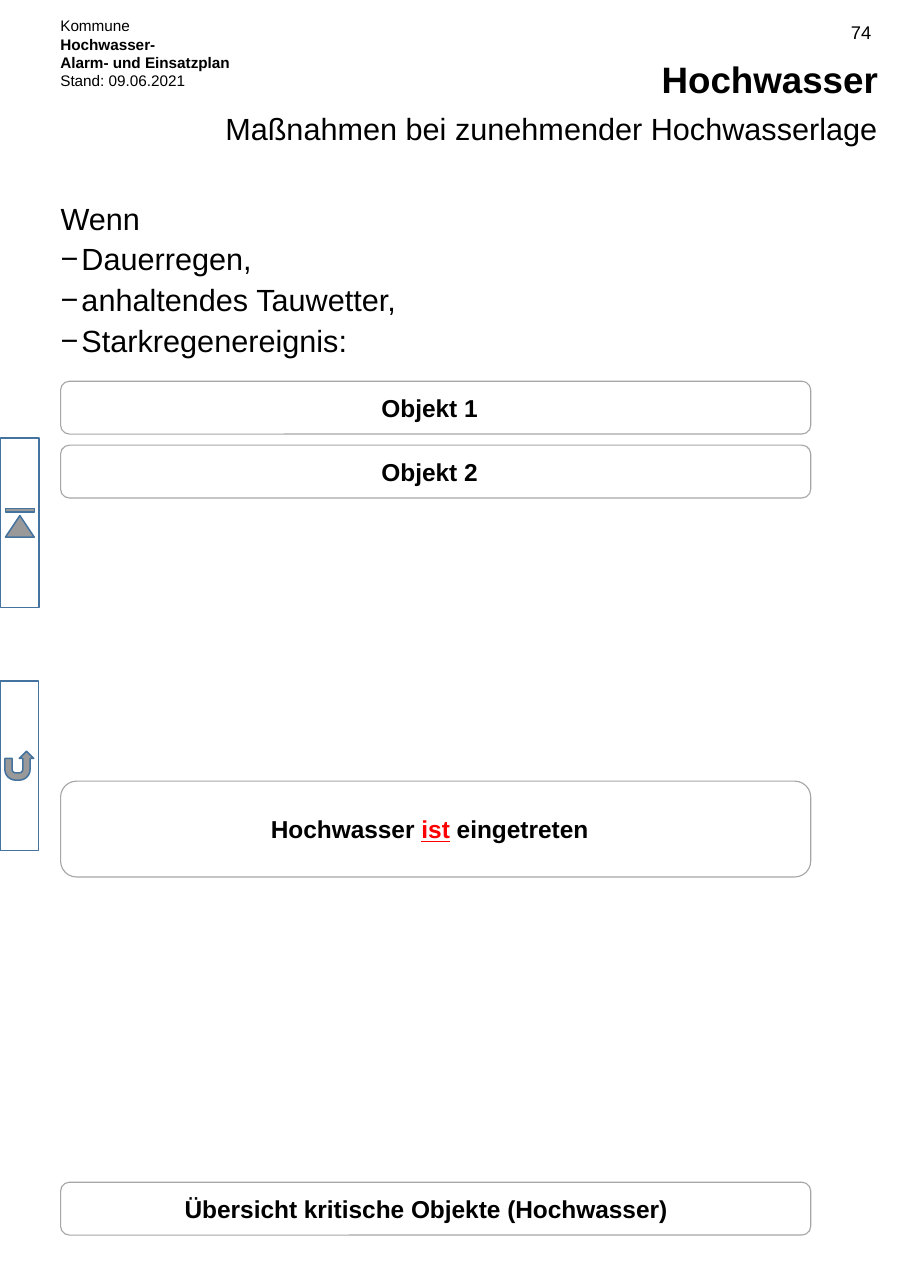
from dataclasses import dataclass

from lxml import etree
from pptx import Presentation
from pptx.dml.color import RGBColor
from pptx.enum import shapes, text
from pptx.oxml import ns
from pptx.util import Inches, Pt

FONT = "Arial"
BLACK, WHITE, RED = "000000", "FFFFFF", "FF0000"
BOX_LINE, BUTTON_LINE = "A6A6A6", "43739E"
LEFT, RIGHT = 0.55, 7.97
BOX_WIDTH = 6.81
LIST_INDENT = 0.19

ALIGN = text.PP_ALIGN
ANCHOR = text.MSO_ANCHOR
SHAPE = shapes.MSO_SHAPE


@dataclass
class Run:
    text: str
    bold: bool = False
    color: str = BLACK
    underline: bool = False


@dataclass
class TextBlock:
    left: float
    top: float
    width: float
    height: float
    size: float
    paragraphs: list[list[Run]]
    align: ALIGN = ALIGN.LEFT
    anchor: ANCHOR = ANCHOR.TOP
    insets: tuple[float, float, float, float] = (0.1, 0.05, 0.1, 0.05)
    line_spacing: float = 1.0
    space_before: float = 0


@dataclass
class ObjectBox:
    top: float
    height: float
    runs: list[Run]


@dataclass
class NavButton:
    kind: SHAPE
    left: float
    top: float
    width: float
    height: float
    rotation: float = 0


TITLE_INSETS = (0.1, 0.05, 0, 0.05)

HEADER = TextBlock(0.45, 0.1, 3.1, 0.94, 10, [
    [Run("Kommune")],
    [Run("Hochwasser-", bold=True)],
    [Run("Alarm- und Einsatzplan", bold=True)],
    [Run("Stand: 09.06.2021")],
])
PAGE_NUMBER = TextBlock(6.58, 0.14, 1.42, 0.31, 12, [[Run("74")]], ALIGN.RIGHT,
                        insets=(0.11, 0.05, 0.09, 0.05))
TITLE = TextBlock(3.01, 0.36, RIGHT - 3.01, 0.61, 24, [[Run("Hochwasser", bold=True)]],
                  ALIGN.RIGHT, ANCHOR.BOTTOM, TITLE_INSETS, 0.9)
SUBTITLE = TextBlock(LEFT, 0.99, RIGHT - LEFT, 0.58, 20,
                     [[Run("Maßnahmen bei zunehmender Hochwasserlage")]],
                     ALIGN.RIGHT, insets=TITLE_INSETS, line_spacing=0.9, space_before=8.3)
CONDITIONS = TextBlock(LEFT, 1.85, 7.44, 2.08, 20, [
    [Run("Wenn")],
    [Run("Dauerregen,")],
    [Run("anhaltendes Tauwetter,")],
    [Run("Starkregenereignis:")],
], insets=(0, 0, 0, 0), line_spacing=0.9, space_before=5)

BOXES = [
    ObjectBox(3.46, 0.48, [Run("Objekt 1", True)]),
    ObjectBox(4.04, 0.48, [Run("Objekt 2", True)]),
    ObjectBox(7.09, 0.87, [Run("Hochwasser ", True), Run("ist", True, RED, True),
                           Run(" eingetreten", True)]),
    ObjectBox(10.73, 0.48, [Run("Übersicht kritische Objekte (Hochwasser) ", True)]),
]
BUTTONS = [
    NavButton(SHAPE.ACTION_BUTTON_BEGINNING, -0.59, 4.57, 1.54, 0.35, 90),
    NavButton(SHAPE.ACTION_BUTTON_RETURN, 0, 6.18, 0.35, 1.54),
]


def rgb(color: str) -> RGBColor:
    return RGBColor.from_string(color)


def fill_text(tf, block: TextBlock) -> None:
    tf.word_wrap = True
    tf.vertical_anchor = block.anchor
    tf.margin_left, tf.margin_top, tf.margin_right, tf.margin_bottom = map(Inches, block.insets)
    for i, runs in enumerate(block.paragraphs):
        p = tf.add_paragraph() if i else tf.paragraphs[0]
        p.alignment = block.align
        p.line_spacing = block.line_spacing
        p.space_before = Pt(block.space_before)
        for run in runs:
            r = p.add_run()
            r.text = run.text
            r.font.name = FONT
            r.font.size = Pt(block.size)
            r.font.bold = run.bold
            r.font.underline = run.underline
            r.font.color.rgb = rgb(run.color)


def add_text(s, block: TextBlock):
    sp = s.shapes.add_textbox(Inches(block.left), Inches(block.top),
                              Inches(block.width), Inches(block.height))
    fill_text(sp.text_frame, block)
    return sp


def add_bullet(p, char: str) -> None:
    props = p._p.get_or_add_pPr()
    props.set("marL", str(Inches(LIST_INDENT)))
    props.set("indent", str(-Inches(LIST_INDENT)))
    etree.SubElement(props, ns.qn("a:buFont")).set("typeface", FONT)
    etree.SubElement(props, ns.qn("a:buChar")).set("char", char)


def add_outlined(s, kind: SHAPE, left: float, top: float, width: float, height: float,
                 line: str, line_width: float):
    sp = s.shapes.add_shape(kind, Inches(left), Inches(top), Inches(width), Inches(height))
    sp.shadow.inherit = False
    sp.fill.solid()
    sp.fill.fore_color.rgb = rgb(WHITE)
    sp.line.color.rgb = rgb(line)
    sp.line.width = Pt(line_width)
    return sp


def add_button(s, button: NavButton) -> None:
    sp = add_outlined(s, button.kind, button.left, button.top, button.width, button.height,
                      BUTTON_LINE, 1)
    sp.rotation = button.rotation


def add_box(s, box: ObjectBox) -> None:
    sp = add_outlined(s, SHAPE.ROUNDED_RECTANGLE, LEFT, box.top, BOX_WIDTH, box.height,
                      BOX_LINE, 0.75)
    fill_text(sp.text_frame, TextBlock(LEFT, box.top, BOX_WIDTH, box.height, 16, [box.runs],
                                       ALIGN.CENTER, ANCHOR.MIDDLE, (0, 0.05, 0.11, 0.05)))


def main() -> None:
    prs = Presentation()
    prs.slide_width, prs.slide_height = Inches(8.27), Inches(11.69)
    s = prs.slides.add_slide(prs.slide_layouts[6])
    for block in (HEADER, PAGE_NUMBER):
        add_text(s, block)
    for button in BUTTONS:
        add_button(s, button)
    for block in (TITLE, SUBTITLE):
        add_text(s, block)
    conditions = add_text(s, CONDITIONS)
    for p in conditions.text_frame.paragraphs[1:]:
        add_bullet(p, "−")
    for box in BOXES:
        add_box(s, box)
    prs.save("out.pptx")


if __name__ == "__main__":
    main()
